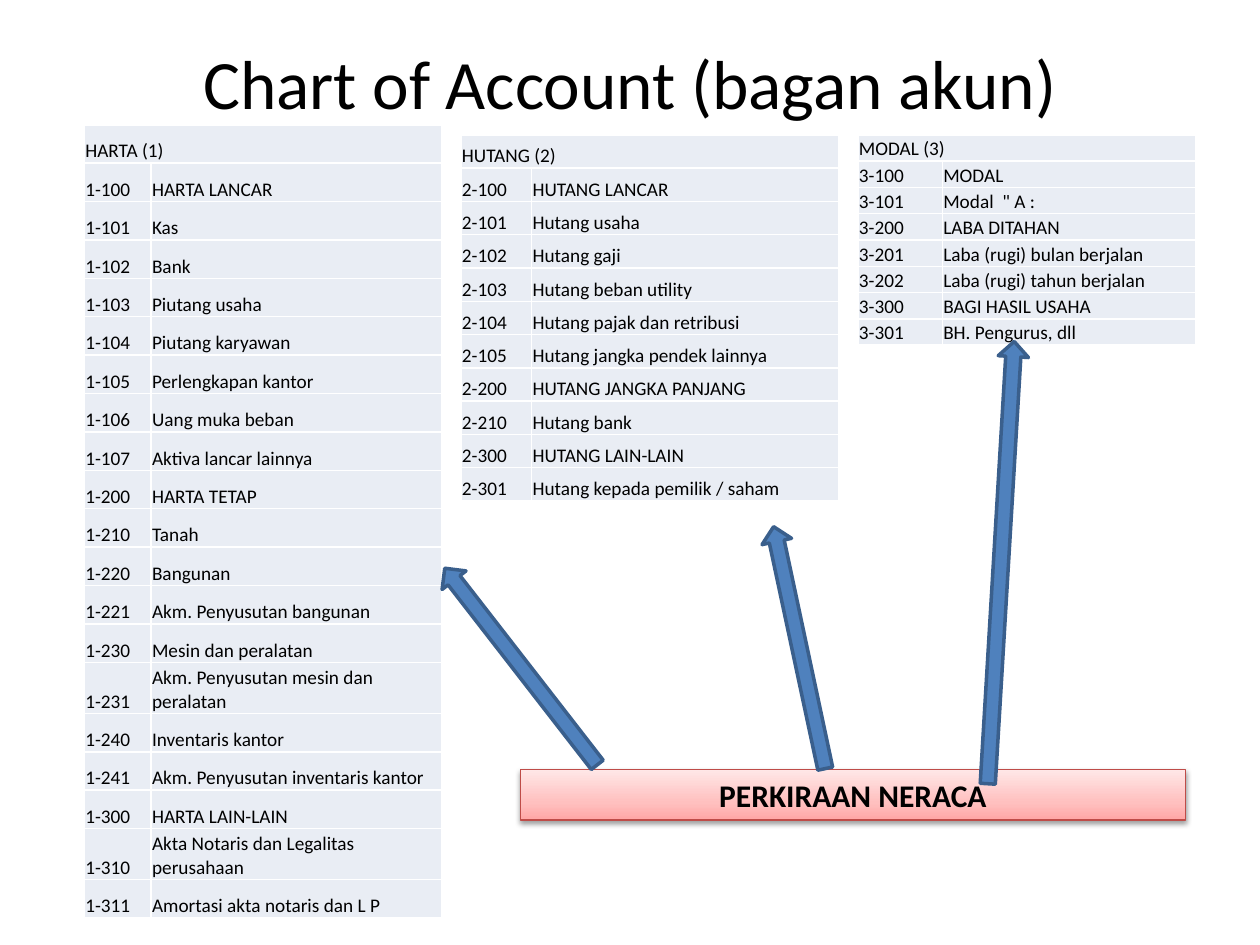
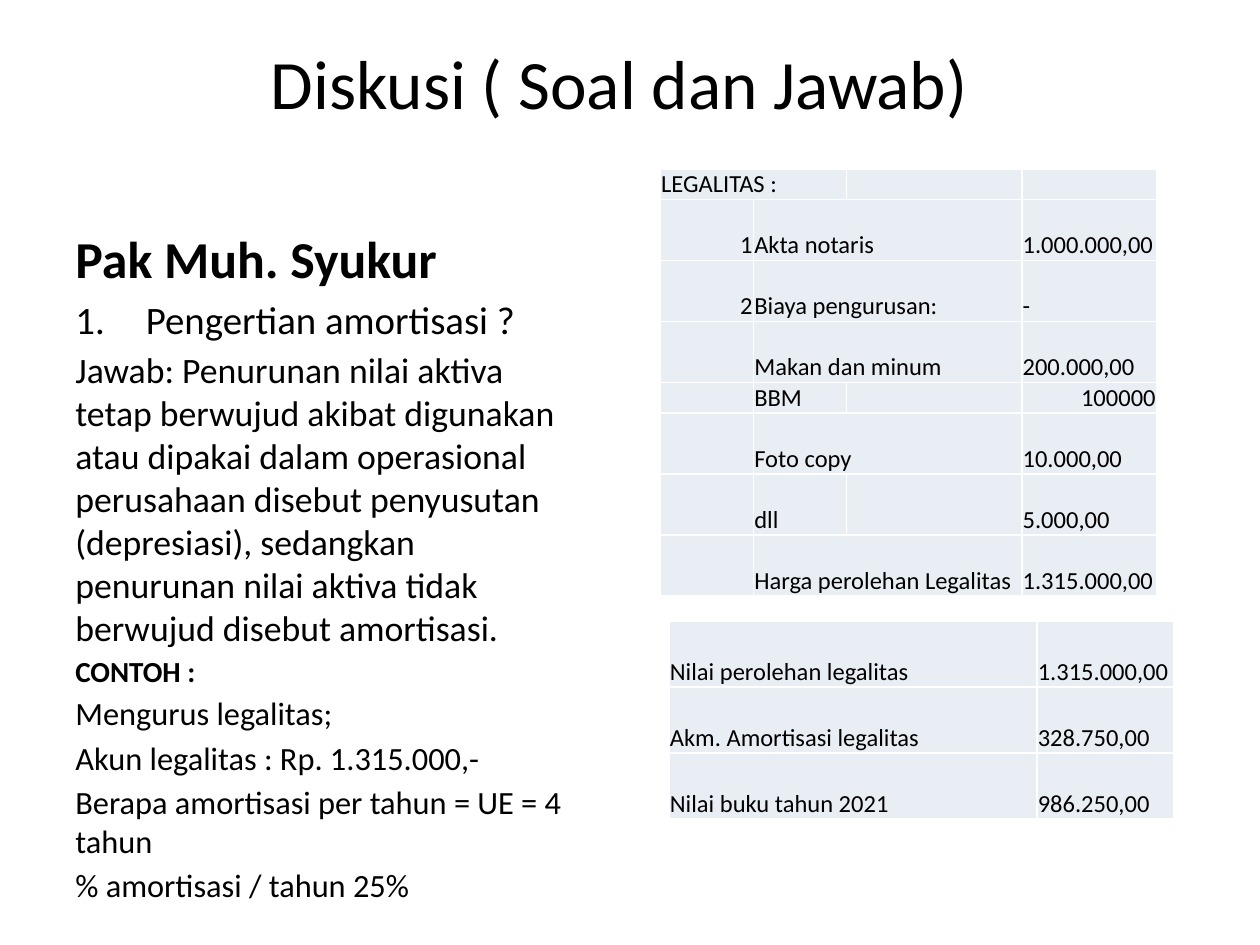
from copy import deepcopy
from dataclasses import dataclass
from math import atan2, degrees, hypot

from lxml.etree import SubElement
from pptx import Presentation
from pptx.dml.color import RGBColor
from pptx.enum.shapes import MSO_SHAPE
from pptx.enum.text import MSO_ANCHOR, PP_ALIGN
from pptx.oxml import parse_xml
from pptx.oxml.ns import nsdecls, qn
from pptx.util import Inches, Pt


@dataclass(frozen=True)
class Theme:
    """Colours, font and type sizes shared by the slides."""

    font: str = "Calibri"
    ink: str = "000000"
    cell: str = "E9EDF4"
    rule: str = "FFFFFF"
    arrow: str = "4F81BD"
    arrow_edge: str = "3A5F8C"
    banner_edge: str = "BF4C48"
    banner_stops: tuple = ((0, "FFA6A5"), (0.35, "FFC0BF"), (1, "FFE7E7"))
    title: float = 39.6
    banner: float = 18
    account: float = 11
    amount: float = 14
    name: float = 29.6
    question: float = 22.2
    answer: float = 20.4
    label: float = 16.6
    example: float = 18.5


THEME = Theme()
WIDTH, HEIGHT = Inches(10), Inches(7.5)
UNIT = WIDTH / 100

ASSETS = [
    ("HARTA (1)", None),
    ("1-100", "HARTA LANCAR"),
    ("1-101", "Kas"),
    ("1-102", "Bank"),
    ("1-103", "Piutang usaha"),
    ("1-104", "Piutang karyawan"),
    ("1-105", "Perlengkapan kantor"),
    ("1-106", "Uang muka beban"),
    ("1-107", "Aktiva lancar lainnya"),
    ("1-200", "HARTA TETAP"),
    ("1-210", "Tanah"),
    ("1-220", "Bangunan"),
    ("1-221", "Akm. Penyusutan bangunan"),
    ("1-230", "Mesin dan peralatan"),
    ("1-231", "Akm. Penyusutan mesin dan peralatan"),
    ("1-240", "Inventaris kantor"),
    ("1-241", "Akm. Penyusutan inventaris kantor"),
    ("1-300", "HARTA LAIN-LAIN"),
    ("1-310", "Akta Notaris dan Legalitas perusahaan"),
    ("1-311", "Amortasi akta notaris dan L P"),
]
DEBTS = [
    ("HUTANG (2)", None),
    ("2-100", "HUTANG LANCAR"),
    ("2-101", "Hutang usaha"),
    ("2-102", "Hutang gaji"),
    ("2-103", "Hutang beban utility"),
    ("2-104", "Hutang pajak dan retribusi"),
    ("2-105", "Hutang jangka pendek lainnya"),
    ("2-200", "HUTANG JANGKA PANJANG"),
    ("2-210", "Hutang bank"),
    ("2-300", "HUTANG LAIN-LAIN"),
    ("2-301", "Hutang kepada pemilik / saham"),
]
CAPITAL = [
    ("MODAL (3)", None),
    ("3-100", "MODAL"),
    ("3-101", "Modal  \" A :"),
    ("3-200", "LABA DITAHAN"),
    ("3-201", "Laba (rugi) bulan berjalan"),
    ("3-202", "Laba (rugi) tahun berjalan"),
    ("3-300", "BAGI HASIL USAHA"),
    ("3-301", "BH. Pengurus, dll"),
]
LEGAL_COSTS = [
    ("LEGALITAS :", None, "", ""),
    ("1", "Akta notaris", None, "1.000.000,00"),
    ("2", "Biaya pengurusan:", None, "-"),
    ("", "Makan dan minum", None, "200.000,00"),
    ("", "BBM", "", "100000"),
    ("", "Foto copy", None, "10.000,00"),
    ("", "dll", "", "5.000,00"),
    ("", "Harga perolehan Legalitas", None, "1.315.000,00"),
]
BOOK_VALUE = [
    ("Nilai perolehan legalitas", "1.315.000,00"),
    ("Akm. Amortisasi legalitas", "328.750,00"),
    ("Nilai buku tahun 2021", "986.250,00"),
]
DISCUSSION = [
    ("Pak Muh. Syukur", THEME.name, True),
    ("Pengertian amortisasi ?", THEME.question, False),
    ("Jawab: Penurunan nilai aktiva tetap berwujud akibat digunakan atau dipakai "
     "dalam operasional perusahaan disebut penyusutan (depresiasi), sedangkan "
     "penurunan nilai aktiva tidak berwujud disebut amortisasi.", THEME.answer, False),
    ("CONTOH :", THEME.label, True),
    ("Mengurus legalitas;", THEME.example, False),
    ("Akun legalitas : Rp. 1.315.000,-", THEME.example, False),
    ("Berapa amortisasi per tahun = UE = 4 tahun", THEME.example, False),
    ("% amortisasi / tahun 25%", THEME.example, False),
]


def grid(*counts):
    """Turn counts of grid units (a hundredth of the width) into lengths."""
    return [round(count * UNIT) for count in counts]


def color(code):
    """Return the colour for a hex code."""
    return RGBColor.from_string(code)


def write(para, text, size, bold=False, align=PP_ALIGN.LEFT):
    """Put styled text in a paragraph."""
    para.text = text
    para.alignment = align
    font = para.font
    font.name, font.size, font.bold = THEME.font, Pt(size), bold
    font.color.rgb = color(THEME.ink)


def add_text_box(page, place):
    """Add a wrapping text box and return its frame."""
    frame = page.shapes.add_textbox(*grid(*place)).text_frame
    frame.word_wrap = True
    return frame


def add_page(deck, title, width=90):
    """Add a blank page with a centred title."""
    page = deck.slides.add_slide(deck.slide_layouts[6])
    frame = add_text_box(page, (5, 3, width, 6.9))
    frame.margin_top = frame.margin_bottom = 0
    frame.vertical_anchor = MSO_ANCHOR.MIDDLE
    write(frame.paragraphs[0], title, THEME.title, align=PP_ALIGN.CENTER)
    return page


def style_cell(cell, text, size):
    """Fill a cell, rule its edges and write its text at the bottom."""
    cell.fill.solid()
    cell.fill.fore_color.rgb = color(THEME.cell)
    cell.vertical_anchor = MSO_ANCHOR.BOTTOM
    cell.margin_left = cell.margin_right = cell.margin_top = Pt(0.5)
    cell.margin_bottom = 0
    para = cell.text_frame.paragraphs[0]
    write(para, text, size, align=PP_ALIGN.RIGHT if text.isdigit() else PP_ALIGN.LEFT)
    if not text:
        para._p.get_or_add_endParaRPr().set("sz", str(size * 100))
    properties = cell._tc.get_or_add_tcPr()
    for index, side in enumerate("LRTB"):
        properties.insert(index, parse_xml(
            f'<a:ln{side} {nsdecls("a")} w="12700"><a:solidFill>'
            f'<a:srgbClr val="{THEME.rule}"/></a:solidFill></a:ln{side}>'))


def add_ledger(page, corner, height, columns, rows, size, weights=None):
    """Add a table whose None cells merge leftwards and whose rows share the height."""
    weights = weights or [1] * len(rows)
    place = grid(*corner, sum(columns), height)
    table = page.shapes.add_table(len(rows), len(columns), *place).table
    table.first_row = table.horz_banding = False
    for column, width in zip(table.columns, grid(*columns)):
        column.width = width
    for row, weight in zip(table.rows, weights):
        row.height = round(height * UNIT * weight / sum(weights))
    for r, texts in enumerate(rows):
        for c, text in enumerate(texts):
            style_cell(table.cell(r, c), text or "", size)
            if text is None:
                table.cell(r, c - 1).merge(table.cell(r, c))


def add_banner(page, place, text):
    """Add a shaded rectangle with a soft shadow and a bold label."""
    box = page.shapes.add_shape(MSO_SHAPE.RECTANGLE, *grid(*place))
    box.shadow.inherit = False
    box.fill.gradient()
    box.fill.gradient_angle = 90
    properties = box._element.spPr
    stops = properties.find(".//" + qn("a:gsLst"))
    stops.insert(1, deepcopy(stops[0]))
    for stop, (position, code) in zip(box.fill.gradient_stops, THEME.banner_stops):
        stop.position = position
        stop.color.rgb = color(code)
    box.line.color.rgb = color(THEME.banner_edge)
    box.line.width = Pt(0.75)
    shadow = SubElement(properties.find(qn("a:effectLst")), qn("a:outerShdw"),
                        blurRad=str(Pt(3.1)), dist=str(Pt(1.6)), dir="5400000", rotWithShape="0")
    shade = SubElement(shadow, qn("a:srgbClr"), val=THEME.ink)
    SubElement(shade, qn("a:alpha"), val="38000")
    write(box.text_frame.paragraphs[0], text, THEME.banner, True, PP_ALIGN.CENTER)


def add_block_arrow(page, tail, tip, thickness=2.4):
    """Add a block arrow that runs from tail to tip."""
    across, down = tip[0] - tail[0], tip[1] - tail[1]
    length = hypot(across, down)
    left = (tail[0] + tip[0] - length) / 2
    top = (tail[1] + tip[1] - thickness) / 2
    arrow = page.shapes.add_shape(MSO_SHAPE.RIGHT_ARROW, *grid(left, top, length, thickness))
    arrow.rotation = degrees(atan2(down, across)) % 360
    arrow.shadow.inherit = False
    arrow.fill.solid()
    arrow.fill.fore_color.rgb = color(THEME.arrow)
    arrow.line.color.rgb = color(THEME.arrow_edge)
    arrow.line.width = Pt(2)


def number(para):
    """Number a paragraph with a hanging indent."""
    properties = para._p.get_or_add_pPr()
    indent = Inches(0.56)
    properties.set("marL", str(indent))
    properties.set("indent", str(-indent))
    properties.insert_element_before(
        parse_xml(f'<a:buAutoNum {nsdecls("a")} type="arabicPeriod"/>'),
        "a:tabLst", "a:defRPr", "a:extLst")


def add_discussion(page, place):
    """Add the question, its answer and the worked example."""
    frame = add_text_box(page, place)
    for index, (text, size, bold) in enumerate(DISCUSSION):
        para = frame.add_paragraph() if index else frame.paragraphs[0]
        write(para, text, size, bold)
        if index:
            para.space_before = Pt(round(size * 0.17, 1))
    number(frame.paragraphs[1])


def build_accounts(deck):
    """Build the chart of accounts."""
    page = add_page(deck, "Chart of Account (bagan akun)")
    weights = [1.33 if len(name or "") > 33 else 1 for _, name in ASSETS]
    add_ledger(page, (6.7, 9.9), 63, (5.3, 23.1), ASSETS, THEME.account, weights)
    add_ledger(page, (36.6, 10.7), 29.1, (5.6, 24.4), DEBTS, THEME.account)
    add_ledger(page, (68.1, 10.7), 16.7, (6.7, 20.1), CAPITAL, THEME.account)
    add_banner(page, (41.3, 61.1, 52.8, 4), "PERKIRAAN NERACA")
    add_block_arrow(page, (47.4, 60.7), (35.3, 45.1))
    add_block_arrow(page, (65.5, 61), (61.4, 41.8))
    add_block_arrow(page, (78.4, 62.2), (80.5, 27.1))


def build_discussion(deck):
    """Build the question and answer page."""
    page = add_page(deck, "Diskusi ( Soal dan Jawab)", 88.3)
    add_discussion(page, (5, 17.5, 41.9, 49.5))
    weights = [1 if row[2] == "" and row[1] != "dll" else 2 for row in LEGAL_COSTS]
    add_ledger(page, (52.4, 13.4), 33.9, (7.4, 7.4, 13.9, 10.7), LEGAL_COSTS,
               THEME.amount, weights)
    add_ledger(page, (53.1, 49.3), 15.7, (29.2, 10.9), BOOK_VALUE, THEME.amount)


def main():
    """Build and save the deck."""
    deck = Presentation()
    deck.slide_width, deck.slide_height = WIDTH, HEIGHT
    build_accounts(deck)
    build_discussion(deck)
    deck.save("out.pptx")


if __name__ == "__main__":
    main()
